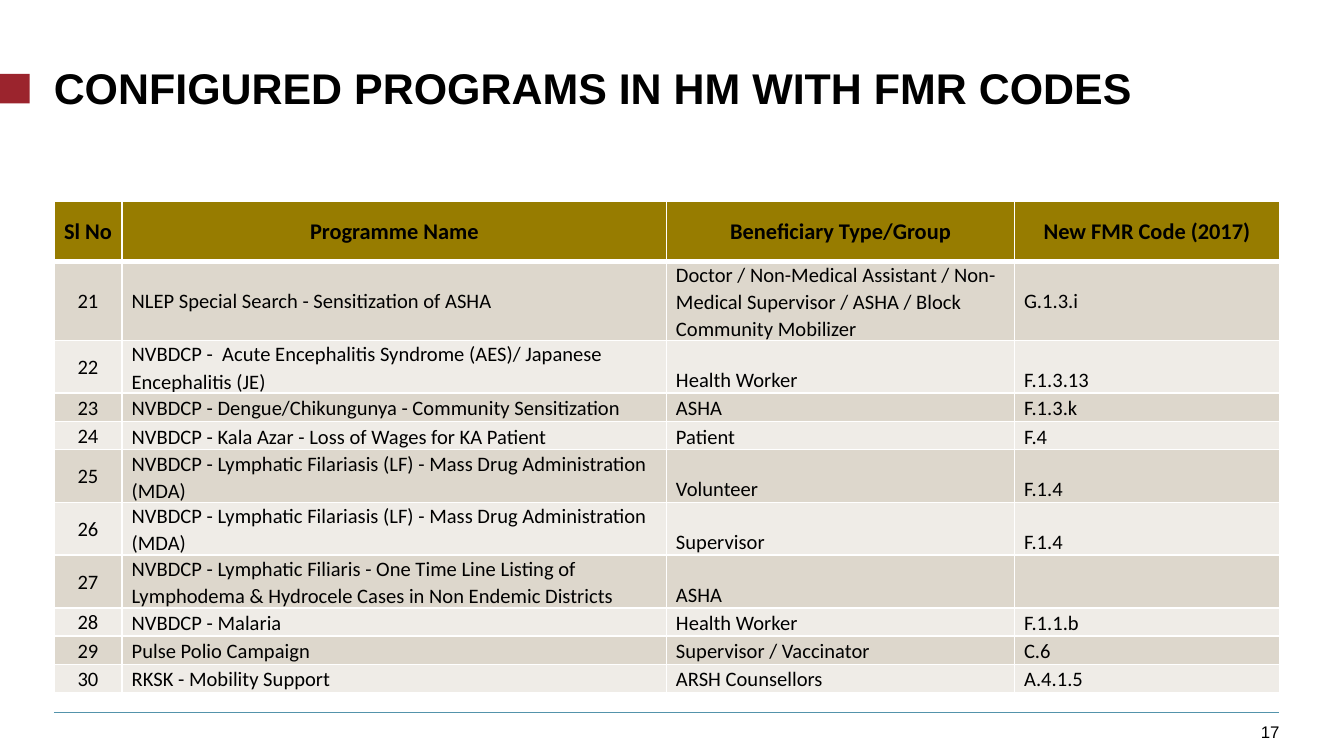
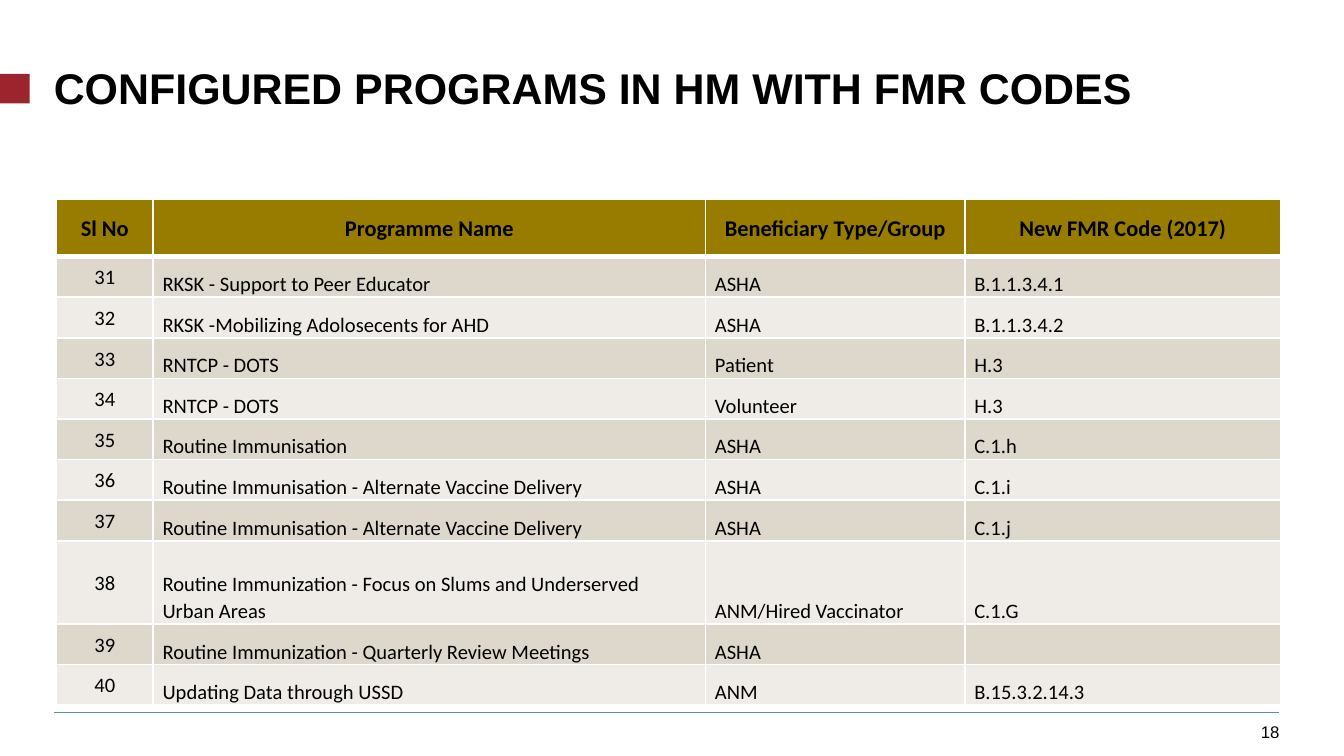
from collections import namedtuple

from lxml.etree import SubElement
from pptx import Presentation
from pptx.dml.color import RGBColor
from pptx.enum.shapes import MSO_CONNECTOR, MSO_SHAPE
from pptx.enum.text import MSO_ANCHOR, PP_ALIGN
from pptx.oxml.ns import qn
from pptx.util import Inches, Pt

GRID = Inches(0.1)
SLIDE_COLUMNS, SLIDE_ROWS = 100, 56.25
Box = namedtuple("Box", "left top width height")

BLACK, WHITE = "000000", "FFFFFF"
MARKER_RED, RULE_BLUE = "9B242D", "5393AB"
HEADER_FILL = "977C00"
BAND_FILLS = ("DDD7CC", "EFECE7")

TITLE = "CONFIGURED PROGRAMS IN HM WITH FMR CODES"
HEADINGS = ("Sl No", "Programme Name", "Beneficiary Type/Group", "New FMR Code (2017)")
CENTRED_SERIALS = (21, 29)

PROGRAMMES_TO_30 = [
    ("NLEP Special Search - Sensitization of ASHA",
     "Doctor / Non-Medical Assistant / Non-Medical Supervisor / ASHA / Block Community Mobilizer",
     "G.1.3.i"),
    ("NVBDCP -  Acute Encephalitis Syndrome (AES)/ Japanese Encephalitis (JE)",
     "Health Worker", "F.1.3.13"),
    ("NVBDCP - Dengue/Chikungunya - Community Sensitization", "ASHA", "F.1.3.k"),
    ("NVBDCP - Kala Azar - Loss of Wages for KA Patient", "Patient", "F.4"),
    ("NVBDCP - Lymphatic Filariasis (LF) - Mass Drug Administration (MDA)", "Volunteer", "F.1.4"),
    ("NVBDCP - Lymphatic Filariasis (LF) - Mass Drug Administration (MDA)", "Supervisor", "F.1.4"),
    ("NVBDCP - Lymphatic Filiaris - One Time Line Listing of Lymphodema & Hydrocele Cases "
     "in Non Endemic Districts", "ASHA", ""),
    ("NVBDCP - Malaria", "Health Worker", "F.1.1.b"),
    ("Pulse Polio Campaign", "Supervisor / Vaccinator", "C.6"),
    ("RKSK - Mobility Support", "ARSH Counsellors", "A.4.1.5"),
]
PROGRAMMES_TO_40 = [
    ("RKSK - Support to Peer Educator", "ASHA", "B.1.1.3.4.1"),
    ("RKSK -Mobilizing Adolosecents for AHD", "ASHA", "B.1.1.3.4.2"),
    ("RNTCP - DOTS", "Patient", "H.3"),
    ("RNTCP - DOTS", "Volunteer", "H.3"),
    ("Routine Immunisation", "ASHA", "C.1.h"),
    ("Routine Immunisation - Alternate Vaccine Delivery", "ASHA", "C.1.i"),
    ("Routine Immunisation - Alternate Vaccine Delivery", "ASHA", "C.1.j"),
    ("Routine Immunization - Focus on Slums and Underserved Urban Areas",
     "ANM/Hired Vaccinator", "C.1.G"),
    ("Routine Immunization - Quarterly Review Meetings", "ASHA", ""),
    ("Updating Data through USSD", "ANM", "B.15.3.2.14.3"),
]


def color(value):
    return RGBColor.from_string(value)


def units(count):
    return round(count * GRID)


def lengths(box):
    return [units(count) for count in box]


def place(shape, box):
    shape.left, shape.top, shape.width, shape.height = lengths(box)


def style(paragraph, font_name, size, bold=False, alignment=PP_ALIGN.LEFT, spacing=1.0):
    paragraph.alignment = alignment
    paragraph.line_spacing = spacing
    paragraph.font.name = font_name
    paragraph.font.size = Pt(size)
    paragraph.font.bold = bold
    paragraph.font.color.rgb = color(BLACK)


def clear_margins(frame):
    frame.margin_left = frame.margin_top = frame.margin_right = frame.margin_bottom = 0


def add_title(slide, box):
    title = slide.shapes.title
    place(title, box)
    frame = title.text_frame
    frame.text = TITLE
    frame.word_wrap = True
    frame.vertical_anchor = MSO_ANCHOR.TOP
    clear_margins(frame)
    style(frame.paragraphs[0], "Arial", 23, True, spacing=Pt(23))


def add_marker(slide, box):
    marker = slide.shapes.add_shape(MSO_SHAPE.RECTANGLE, *lengths(box))
    marker.shadow.inherit = False
    marker.fill.solid()
    marker.fill.fore_color.rgb = color(MARKER_RED)
    marker.line.fill.background()


def add_footer(slide, box, number):
    left, top, right = units(box.left), units(box.top), units(box.left + box.width)
    rule = slide.shapes.add_connector(MSO_CONNECTOR.STRAIGHT, left, top, right, top)
    rule.line.color.rgb = color(RULE_BLUE)
    rule.line.width = Pt(0.5)
    SubElement(rule.element.spPr, qn("a:effectLst"))

    number_width, number_height = 2.1, 1.7
    number_box = Box(box.left + box.width - number_width, box.top + box.height - number_height,
                     number_width, number_height)
    frame = slide.shapes.add_textbox(*lengths(number_box)).text_frame
    frame.text = str(number)
    frame.word_wrap = True
    frame.vertical_anchor = MSO_ANCHOR.BOTTOM
    clear_margins(frame)
    style(frame.paragraphs[0], "Arial", 9, alignment=PP_ALIGN.RIGHT)


def add_borders(cell, bottom_width):
    properties = cell._tc.get_or_add_tcPr()
    for side, width in (("L", 1), ("R", 1), ("T", 1), ("B", bottom_width)):
        border = SubElement(properties, qn(f"a:ln{side}"), w=str(Pt(width)))
        fill = SubElement(border, qn("a:solidFill"))
        SubElement(fill, qn("a:srgbClr"), val=WHITE)


def fill_cell(cell, text, fill, anchor, alignment, header):
    add_borders(cell, 3 if header else 1)
    cell.fill.solid()
    cell.fill.fore_color.rgb = color(fill)
    cell.vertical_anchor = anchor
    cell.margin_left = cell.margin_right = Inches(0.07)
    cell.margin_top = cell.margin_bottom = 0
    cell.text = text
    style(cell.text_frame.paragraphs[0], "Calibri", 12 if header else 11, header, alignment, 1.07)


def add_programme_table(slide, box, first_serial, programmes, column_widths, row_heights):
    frame = slide.shapes.add_table(len(programmes) + 1, len(HEADINGS), *lengths(box))
    table = frame.table
    for column, width in zip(table.columns, column_widths):
        column.width = units(width)
    for row, height in zip(table.rows, row_heights):
        row.height = units(height)
    place(frame, box)

    for column, heading in enumerate(HEADINGS):
        fill_cell(table.cell(0, column), heading, HEADER_FILL,
                  MSO_ANCHOR.MIDDLE, PP_ALIGN.CENTER, True)
    for row, programme in enumerate(programmes, 1):
        serial = first_serial + row - 1
        for column, text in enumerate((str(serial), *programme)):
            centred = column == 0 or (serial in CENTRED_SERIALS and column != 2)
            fill_cell(table.cell(row, column), text, BAND_FILLS[(row - 1) % 2],
                      MSO_ANCHOR.MIDDLE if centred else MSO_ANCHOR.BOTTOM,
                      PP_ALIGN.LEFT if column else PP_ALIGN.CENTER, False)


def add_programme_slide(presentation, number, table_box, *table_details):
    slide = presentation.slides.add_slide(presentation.slide_layouts[5])
    add_marker(slide, Box(0, 5.5, 2.2, 2.2))
    add_footer(slide, Box(4, 53, 91.2, 2.2), number)
    add_programme_table(slide, table_box, *table_details)
    add_title(slide, Box(4, 5.2, 91.1, 4.2))


def main():
    presentation = Presentation()
    presentation.slide_width = units(SLIDE_COLUMNS)
    presentation.slide_height = units(SLIDE_ROWS)
    add_programme_slide(presentation, 17, Box(4, 14.95, 91.1, 36.7), 21, PROGRAMMES_TO_30,
                        (5.1, 40.5, 25.9, 19.7), (4.5, 3.1, *[2.1] * 9))
    add_programme_slide(presentation, 18, Box(4.2, 14.8, 91.1, 37.6), 31, PROGRAMMES_TO_40,
                        (7.2, 41.1, 19.3, 23.5), (4.3, *[3.02] * 7, 6.2, *[3.02] * 2))
    presentation.save("out.pptx")


if __name__ == "__main__":
    main()
